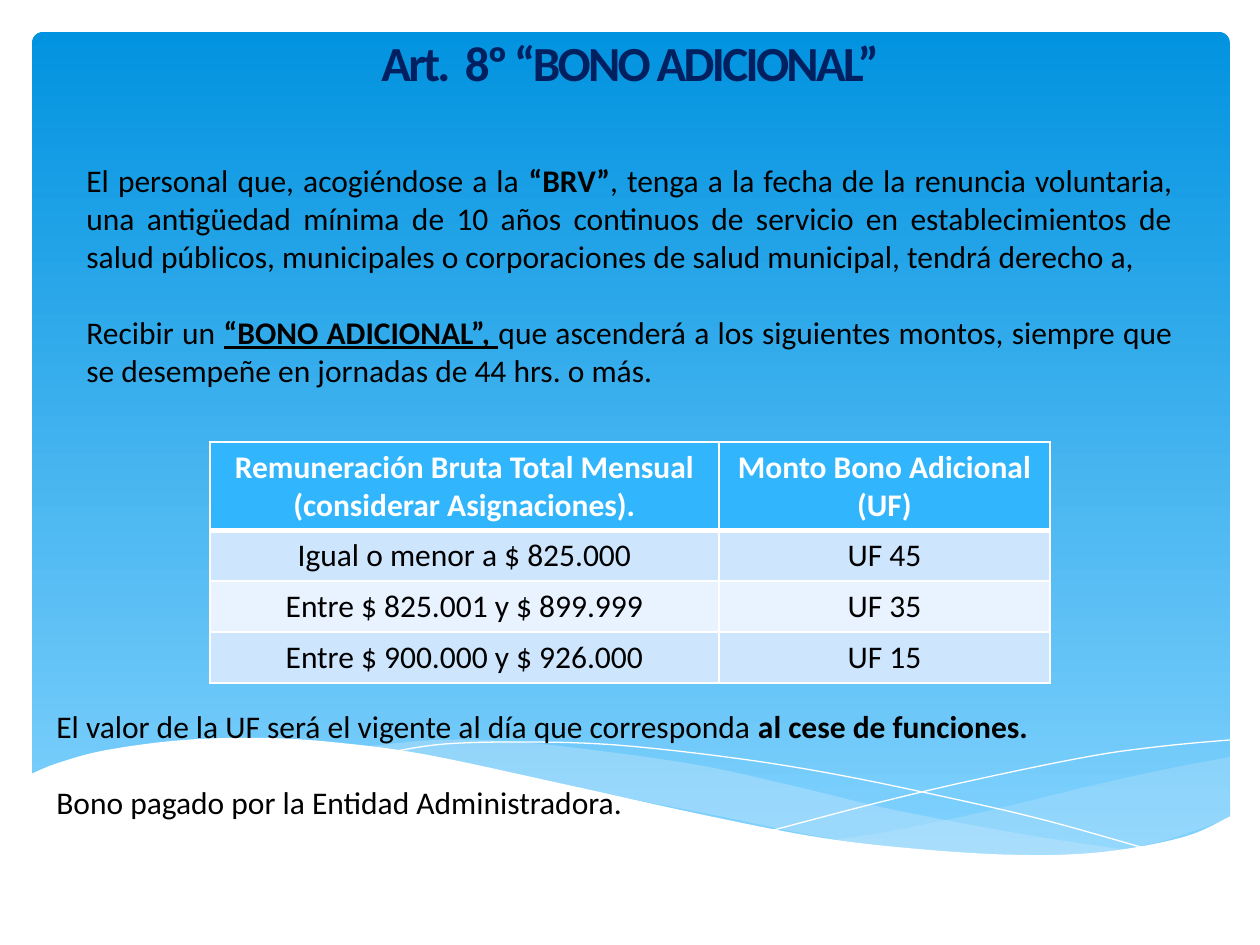
from dataclasses import dataclass
from typing import Optional

from lxml import etree
from pptx import Presentation
from pptx import util as u
from pptx.dml.color import RGBColor
from pptx.enum import shapes, text
from pptx.oxml.ns import qn

PX = u.Inches(1) / 126  # one px in EMU


@dataclass(frozen=True)
class Theme:
    font: str = "Calibri"
    title_size: int = 28
    body_size: int = 18
    gap: int = 22
    black: str = "000000"
    white: str = "FFFFFF"
    navy: str = "002060"
    sky_top: str = "0293E0"
    sky_bottom: str = "83D3FE"
    mist: str = "C6E7FC"
    header: str = "31B6FD"
    bands: tuple = ("CEE5FE", "E8F3FF")


THEME = Theme()


@dataclass(frozen=True)
class Span:
    words: str
    bold: bool = False
    underline: bool = False


@dataclass(frozen=True)
class TextBlock:
    box: tuple
    paras: tuple


@dataclass(frozen=True)
class Wave:
    curves: tuple
    fill: Optional[str] = None
    opacity: int = 100


WAVES = (
    Wave((((1230, 757), (1162, 770), (1086, 787), (983, 812), (891, 831), (834, 840)),
          ((834, 840), (924, 851), (1013, 857), (1090, 854), (1162, 841), (1231, 818))),
         THEME.mist, 29),
    Wave((((362, 747), (435, 740), (504, 741), (585, 749), (698, 765), (794, 786),
           (890, 809), (1022, 834), (1126, 850)),
          ((1126, 850), (1057, 857), (961, 855), (839, 840), (714, 815), (567, 786),
           (457, 761), (362, 747))),
         THEME.mist, 40),
    Wave((((391, 752), (445, 744), (525, 742), (616, 745), (734, 758), (839, 775),
           (959, 800), (1048, 821), (1144, 848)),)),
    Wave((((774, 830), (877, 803), (979, 779), (1092, 756), (1165, 746), (1230, 740)),)),
    Wave((((29, 775), (58, 763), (107, 750), (184, 740), (266, 738), (341, 743),
           (428, 755), (563, 784), (699, 814), (816, 837), (917, 849), (1019, 855),
           (1103, 852), (1184, 837), (1231, 816)),
          ((1231, 921), (29, 921))),
         THEME.white),
)

BLOCKS = (
    TextBlock((74, 155, 1111, 318), (
        (Span("El personal que, acogiéndose a la "), Span("“BRV”", bold=True),
         Span(", tenga a la fecha de la renuncia voluntaria, una antigüedad mínima de "
              "10 años continuos de servicio en establecimientos de salud públicos, "
              "municipales o corporaciones de salud municipal, tendrá derecho a,")),
        (Span("Recibir un "), Span("“BONO ADICIONAL”, ", bold=True, underline=True),
         Span("que ascenderá a los siguientes montos, siempre que se desempeñe en "
              "jornadas de 44 hrs. o más.")),
    )),
    TextBlock((44, 701, 1111, 127), (
        (Span("El valor de la UF será el vigente al día que corresponda "),
         Span("al cese de funciones.", bold=True)),
        (Span("Bono pagado por la Entidad Administradora."),),
    )),
)

BONUS_ROWS = (
    ("Remuneración Bruta Total Mensual (considerar Asignaciones).", "Monto Bono Adicional (UF)"),
    ("Igual o menor a $ 825.000", "UF 45"),
    ("Entre $ 825.001 y $ 899.999", "UF 35"),
    ("Entre $ 900.000 y $ 926.000", "UF 15"),
)


def emu(*lengths: int) -> list:
    return [u.Emu(round(length * PX)) for length in lengths]


def rgb(color: str) -> RGBColor:
    return RGBColor.from_string(color)


def apply(target, **values) -> None:
    for name, value in values.items():
        setattr(target, name, value)


def add_span(para, span: Span, color: str, size: int):
    run = para.add_run()
    run.text = span.words
    apply(run.font, name=THEME.font, size=u.Pt(size), bold=span.bold, underline=span.underline)
    run.font.color.rgb = rgb(color)
    return run


def smooth(anchors: tuple, steps: int = 6) -> list:
    """Points of a Catmull-Rom curve through the anchors."""
    if len(anchors) < 3:
        return list(anchors)
    ring = (anchors[0], *anchors, anchors[-1])
    points = [anchors[0]]
    for a, b, c, d in zip(ring, ring[1:], ring[2:], ring[3:]):
        for t in (step / steps for step in range(1, steps + 1)):
            points.append(tuple(
                (2 * q + (r - p) * t + (2 * p - 5 * q + 4 * r - s) * t ** 2
                 + (3 * q - p - 3 * r + s) * t ** 3) / 2
                for p, q, r, s in zip(a, b, c, d)))
    return points


def add_wave(page, wave: Wave) -> None:
    start, *rest = [emu(*point) for curve in wave.curves for point in smooth(curve)]
    builder = page.shapes.build_freeform(*start)
    builder.add_line_segments(rest, close=wave.fill is not None)
    shape = builder.convert_to_shape()
    shape.shadow.inherit = False
    if wave.fill is None:
        shape.fill.background()
        shape.line.color.rgb = rgb(THEME.white)
        shape.line.width = u.Pt(0)
        return
    shape.line.fill.background()
    shape.fill.solid()
    shape.fill.fore_color.rgb = rgb(wave.fill)
    if wave.opacity < 100:
        color = next(shape.element.spPr.iter(qn("a:srgbClr")))
        etree.SubElement(color, qn("a:alpha")).set("val", str(wave.opacity * 1000))


def add_sky(page) -> None:
    sky = page.shapes.add_shape(shapes.MSO_SHAPE.ROUNDED_RECTANGLE, *emu(32, 32, 1198, 832))
    sky.adjustments[0] = 0.013
    sky.shadow.inherit = False
    sky.line.fill.background()
    sky.fill.gradient()
    sky.fill.gradient_angle = 270
    for stop, color in zip(sky.fill.gradient_stops, (THEME.sky_top, THEME.sky_bottom)):
        stop.color.rgb = rgb(color)


def place_title(page, words: str) -> None:
    title = page.shapes.title
    apply(title, **dict(zip(("left", "top", "width", "height"), emu(0, 26, 1260, 72))))
    apply(title.text_frame, vertical_anchor=text.MSO_ANCHOR.MIDDLE, word_wrap=True)
    para = title.text_frame.paragraphs[0]
    para.alignment = text.PP_ALIGN.CENTER
    run = add_span(para, Span(words, bold=True), THEME.navy, THEME.title_size)
    run.font._element.set("spc", "-150")
    page.shapes._spTree.append(title.element)  # in front of the background


def add_block(page, block: TextBlock) -> None:
    frame = page.shapes.add_textbox(*emu(*block.box)).text_frame
    frame.word_wrap = True
    for index, spans in enumerate(block.paras):
        para = frame.add_paragraph() if index else frame.paragraphs[0]
        apply(para, alignment=text.PP_ALIGN.JUSTIFY, space_before=u.Pt(THEME.gap if index else 0))
        for span in spans:
            add_span(para, span, THEME.black, THEME.body_size)


def add_border(cell, side: str, points: int) -> None:
    line = etree.SubElement(cell._tc.get_or_add_tcPr(), qn(f"a:ln{side}"), w=str(u.Pt(points)))
    fill = etree.SubElement(line, qn("a:solidFill"))
    etree.SubElement(fill, qn("a:srgbClr")).set("val", THEME.white)


def add_bonus_table(page) -> None:
    table = page.shapes.add_table(len(BONUS_ROWS), 2, *emu(210, 442, 840, 241)).table
    apply(table, horz_banding=False)
    for column, width in zip(table.columns, emu(509, 331)):
        column.width = width
    for r, values in enumerate(BONUS_ROWS):
        table.rows[r].height = emu(51 if r else 88)[0]
        for c, words in enumerate(values):
            cell = table.cell(r, c)
            widths = {"L": 1, "R": 1, "T": 3 if r == 1 else 1, "B": 1 if r else 3}
            for side, points in widths.items():
                add_border(cell, side, points)
            cell.fill.solid()
            cell.fill.fore_color.rgb = rgb(THEME.bands[(r - 1) % 2] if r else THEME.header)
            para = cell.text_frame.paragraphs[0]
            para.alignment = text.PP_ALIGN.CENTER
            add_span(para, Span(words, bold=r == 0), THEME.black if r else THEME.white, THEME.body_size)


def main() -> None:
    deck = Presentation()
    apply(deck, slide_width=u.Inches(10), slide_height=u.Inches(7.5))
    page = deck.slides.add_slide(deck.slide_layouts[5])
    # Background
    add_sky(page)
    for wave in WAVES:
        add_wave(page, wave)
    # Content
    place_title(page, "Art.  8º “BONO ADICIONAL”")
    add_block(page, BLOCKS[0])
    add_bonus_table(page)
    add_block(page, BLOCKS[1])
    deck.save("out.pptx")


if __name__ == "__main__":
    main()
